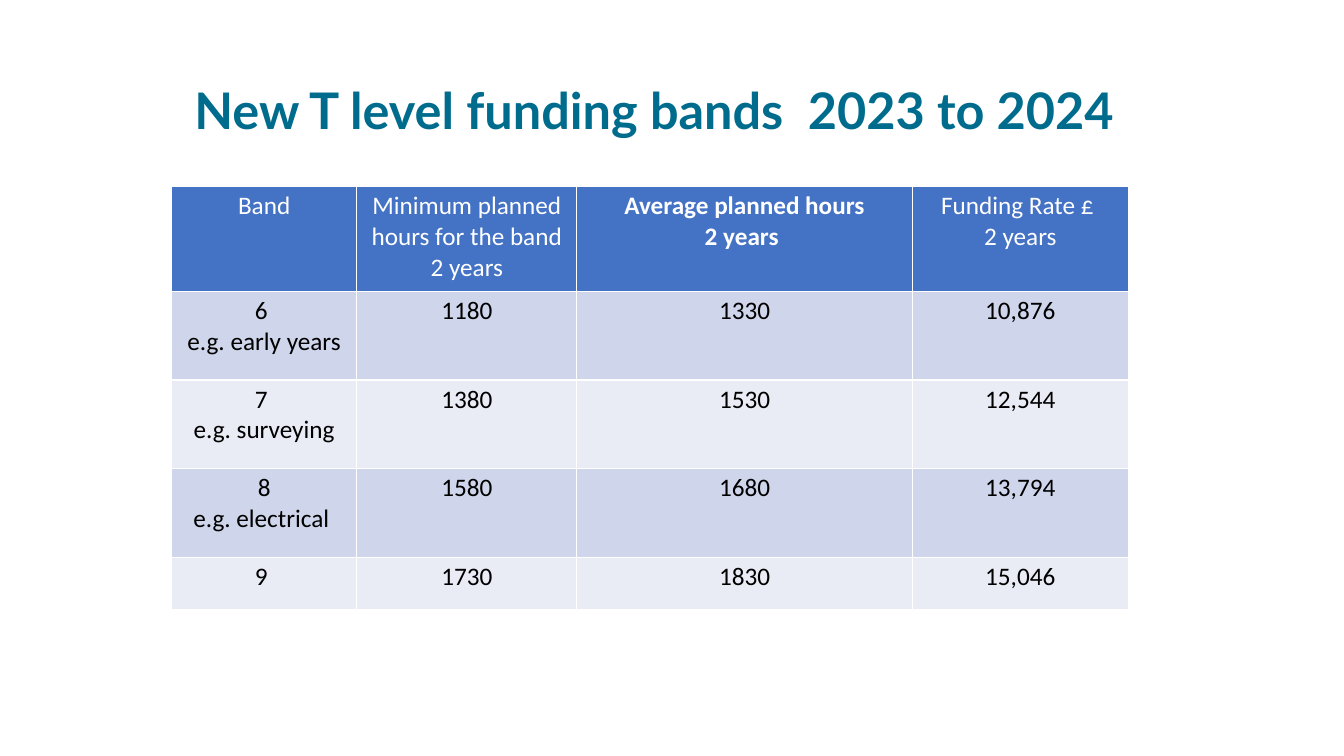
from pptx import Presentation
from pptx import util as u
from pptx.dml.color import RGBColor
from pptx.enum import text

COLOURS = {
    "title": "006C8D",
    "header": "4472C4",
    "header_text": "FFFFFF",
    "odd_row": "CFD5EA",
    "even_row": "E9EBF5",
    "body_text": "000000",
}
TITLE = "New T level funding bands  2023 to 2024"
COLUMN_WIDTHS = [1.84, 2.18, 3.33, 2.14]
ROW_HEIGHTS = [1.04, 0.88, 0.88, 0.88, 0.52]
BOLD_COLUMN = 2
FUNDING_BANDS = [
    [
        "Band",
        "Minimum planned hours for the band 2 years",
        "Average planned hours\n2 years ",
        "Funding Rate £ \n2 years",
    ],
    ["6 \ne.g. early years", "1180", "1330", "10,876"],
    ["7 \ne.g. surveying", "1380", "1530", "12,544"],
    ["8\ne.g. electrical ", "1580", "1680", "13,794"],
    ["9 ", "1730", "1830", "15,046"],
]


def style_font(font, name, size, colour, bold):
    """Set the typeface, size, colour and weight of a font."""
    font.name = name
    font.size = u.Pt(size)
    font.bold = bold
    font.color.rgb = RGBColor.from_string(COLOURS[colour])


def add_title(page, left, top, width, height):
    """Place the slide title in the given box."""
    box = page.shapes.add_textbox(*map(u.Inches, (left, top, width, height)))
    frame = box.text_frame
    frame.word_wrap = True
    frame.vertical_anchor = text.MSO_ANCHOR.MIDDLE
    frame.text = TITLE
    para = frame.paragraphs[0]
    para.line_spacing = 0.9
    style_font(para.runs[0].font, "Lato", 36, "title", True)


def fill_cell(cell, wording, fill, colour, bold):
    """Write centred text into a table cell and colour it."""
    cell.fill.solid()
    cell.fill.fore_color.rgb = RGBColor.from_string(COLOURS[fill])
    cell.margin_left = cell.margin_right = u.Inches(0.1)
    cell.margin_top = cell.margin_bottom = u.Inches(0.04)
    cell.text_frame.text = wording
    for para in cell.text_frame.paragraphs:
        para.alignment = text.PP_ALIGN.CENTER
        for span in para.runs:
            style_font(span.font, "Calibri", 18, colour, bold)


def add_band_table(page, left, top):
    """Place the table of funding bands with its corner at left, top."""
    size = (sum(COLUMN_WIDTHS), sum(ROW_HEIGHTS))
    table = page.shapes.add_table(
        len(ROW_HEIGHTS), len(COLUMN_WIDTHS), *map(u.Inches, (left, top, *size))
    ).table
    for column, width in zip(table.columns, COLUMN_WIDTHS):
        column.width = u.Inches(width)
    for row, height in zip(table.rows, ROW_HEIGHTS):
        row.height = u.Inches(height)
    for row_index, wordings in enumerate(FUNDING_BANDS):
        is_header = row_index == 0
        stripe = "odd_row" if row_index % 2 else "even_row"
        for column_index, wording in enumerate(wordings):
            fill_cell(
                table.cell(row_index, column_index),
                wording,
                "header" if is_header else stripe,
                "header_text" if is_header else "body_text",
                is_header and column_index == BOLD_COLUMN,
            )


def main():
    """Build the funding bands slide and save it."""
    deck = Presentation()
    deck.slide_width = u.Inches(13.33)
    deck.slide_height = u.Inches(7.5)
    page = deck.slides.add_slide(deck.slide_layouts[6])
    add_title(page, 1.83, 0.4, 10.45, 1.45)
    add_band_table(page, 1.7, 1.85)
    deck.save("out.pptx")


if __name__ == "__main__":
    main()
